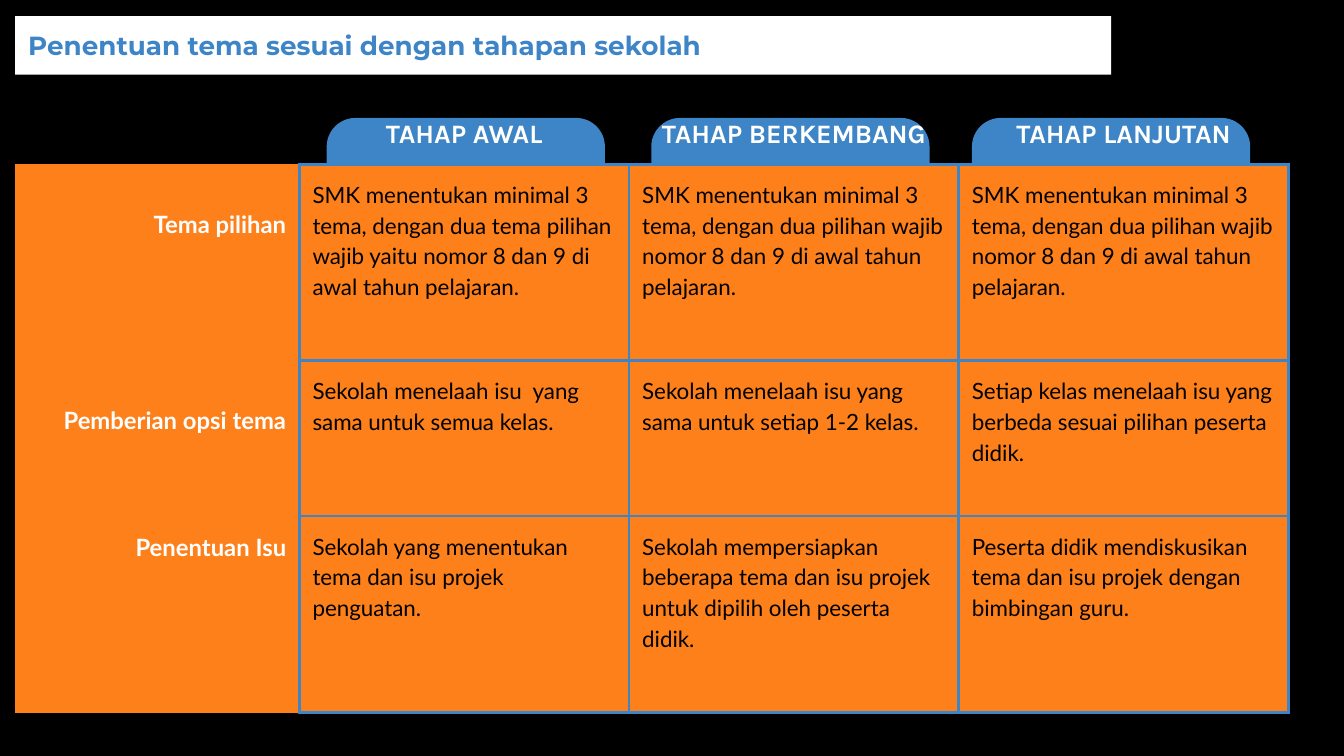
from lxml import etree
from pptx import Presentation
from pptx import util as u
from pptx.dml.color import RGBColor
from pptx.enum import shapes, text
from pptx.oxml.ns import qn

COLORS = {"ground": "000000", "accent": "3D85C6", "cell": "FE801A",
          "light": "FFFFFF", "dark": "000000"}
NO_GRID_STYLE = "{2D5ABB26-0587-4C30-8999-92F81FD0307C}"

# Grid, in inches
LEFT, TOP = 0.15, 0.74
LABEL_WIDTH, STAGE_WIDTH = 2.82, 3.27
ROW_HEIGHTS = [0.89, 1.95, 1.54, 1.95]
PADDING = 0.13
TAB_TOP, TAB_WIDTH, TAB_HEIGHT = 1.17, 2.76, 0.57

# Text looks: font, size, colour, bold, alignment, line spacing
TITLE_LOOK = ("Montserrat", 18.7, "accent", True, text.PP_ALIGN.LEFT, 1.0)
STAGE_LOOK = ("Karla", 19, "light", True, text.PP_ALIGN.CENTER, 1.0)
ASPECT_LOOK = ("Lato", 17, "light", True, text.PP_ALIGN.RIGHT, 1.15)
DETAIL_LOOK = ("Lato", 16, "dark", False, text.PP_ALIGN.LEFT, 1.15)

# Stage name and the distance of its tab from the column edge
STAGES = [("TAHAP AWAL", 0.27), ("TAHAP BERKEMBANG", 0.22), ("TAHAP LANJUTAN", 0.13)]

TWO_CHOICES = ("SMK menentukan minimal 3 tema, dengan dua pilihan wajib nomor 8 dan 9 "
               "di awal tahun pelajaran.")

# Aspect, top margin of its label, one text for each stage
ASPECTS = [
    ("Tema pilihan", 0.41, [
        "SMK menentukan minimal 3 tema, dengan dua tema pilihan wajib yaitu "
        "nomor 8 dan 9 di awal tahun pelajaran.",
        TWO_CHOICES,
        TWO_CHOICES]),
    ("Pemberian opsi tema", 0.41, [
        "Sekolah menelaah isu  yang sama untuk semua kelas.",
        "Sekolah menelaah isu yang sama untuk setiap 1-2 kelas.",
        "Setiap kelas menelaah isu yang berbeda sesuai pilihan peserta didik."]),
    ("Penentuan Isu", PADDING, [
        "Sekolah yang menentukan tema dan isu projek penguatan.",
        "Sekolah mempersiapkan beberapa tema dan isu projek untuk dipilih oleh "
        "peserta didik.",
        "Peserta didik mendiskusikan tema dan isu projek dengan bimbingan guru."]),
]


def rgb(name):
    return RGBColor.from_string(COLORS[name])


def paint(part, color):
    part.fill.solid()
    part.fill.fore_color.rgb = rgb(color)


def style(paragraph, look):
    font = paragraph.font
    font.name, size, color, font.bold, paragraph.alignment, paragraph.line_spacing = look
    font.size = u.Pt(size)
    font.color.rgb = rgb(color)


def set_margins(part, top=PADDING, bottom=PADDING):
    part.margin_left = part.margin_right = u.Inches(PADDING)
    part.margin_top, part.margin_bottom = u.Inches(top), u.Inches(bottom)


def add_heading(slide):
    heading = slide.shapes.title
    heading.left, heading.top = u.Inches(LEFT), u.Inches(0.16)
    heading.width, heading.height = u.Inches(10.87), u.Inches(0.58)
    paint(heading, "light")
    frame = heading.text_frame
    frame.text = "Penentuan tema sesuai dengan tahapan sekolah"
    frame.word_wrap = True
    frame.auto_size = text.MSO_AUTO_SIZE.NONE
    frame.vertical_anchor = text.MSO_ANCHOR.MIDDLE
    set_margins(frame)
    style(frame.paragraphs[0], TITLE_LOOK)


def add_stage_tab(slide, column, offset):
    left = LEFT + LABEL_WIDTH + column * STAGE_WIDTH + offset
    tab = slide.shapes.add_shape(
        shapes.MSO_SHAPE.ROUND_2_SAME_RECTANGLE, u.Inches(left), u.Inches(TAB_TOP),
        u.Inches(TAB_WIDTH), u.Inches(TAB_HEIGHT))
    tab.adjustments[0] = 0.5
    tab.shadow.inherit = False
    paint(tab, "accent")
    tab.line.fill.background()


def add_borders(cell, sides):
    properties = cell._tc.get_or_add_tcPr()
    for side in sides:
        line = etree.SubElement(properties, qn(f"a:ln{side}"), w=str(u.Pt(2.25)))
        fill = etree.SubElement(line, qn("a:solidFill"))
        etree.SubElement(fill, qn("a:srgbClr"), val=COLORS["accent"])


def fill_cell(cell, words, look, borders, top=PADDING, bottom=PADDING):
    cell.text = words
    set_margins(cell, top, bottom)
    add_borders(cell, borders)
    style(cell.text_frame.paragraphs[0], look)


def add_stage_table(slide):
    widths = [LABEL_WIDTH] + [STAGE_WIDTH] * len(STAGES)
    table = slide.shapes.add_table(
        len(ROW_HEIGHTS), len(widths), u.Inches(LEFT), u.Inches(TOP),
        u.Inches(sum(widths)), u.Inches(sum(ROW_HEIGHTS))).table
    table.first_row = table.horz_banding = False
    table._tbl.tblPr.find(qn("a:tableStyleId")).text = NO_GRID_STYLE
    for column, width in zip(table.columns, widths):
        column.width = u.Inches(width)
    for row, height in zip(table.rows, ROW_HEIGHTS):
        row.height = u.Inches(height)

    # Stage names, over the tabs
    for column, (stage, _) in enumerate(STAGES, 1):
        fill_cell(table.cell(0, column), stage, STAGE_LOOK, "B", top=0.44, bottom=0.05)

    # Aspects and their texts
    for row, (aspect, label_top, details) in enumerate(ASPECTS, 1):
        fill_cell(table.cell(row, 0), aspect, ASPECT_LOOK, "R", top=label_top)
        for column, detail in enumerate(details, 1):
            fill_cell(table.cell(row, column), detail, DETAIL_LOOK, "LRTB")
        for cell in table.rows[row].cells:
            paint(cell, "cell")


def main():
    deck = Presentation()
    deck.slide_width, deck.slide_height = u.Inches(13.33), u.Inches(7.5)
    slide = deck.slides.add_slide(deck.slide_layouts[5])
    paint(slide.background, "ground")
    add_heading(slide)
    for column, (_, offset) in enumerate(STAGES):
        add_stage_tab(slide, column, offset)
    add_stage_table(slide)
    deck.save("out.pptx")


if __name__ == "__main__":
    main()
